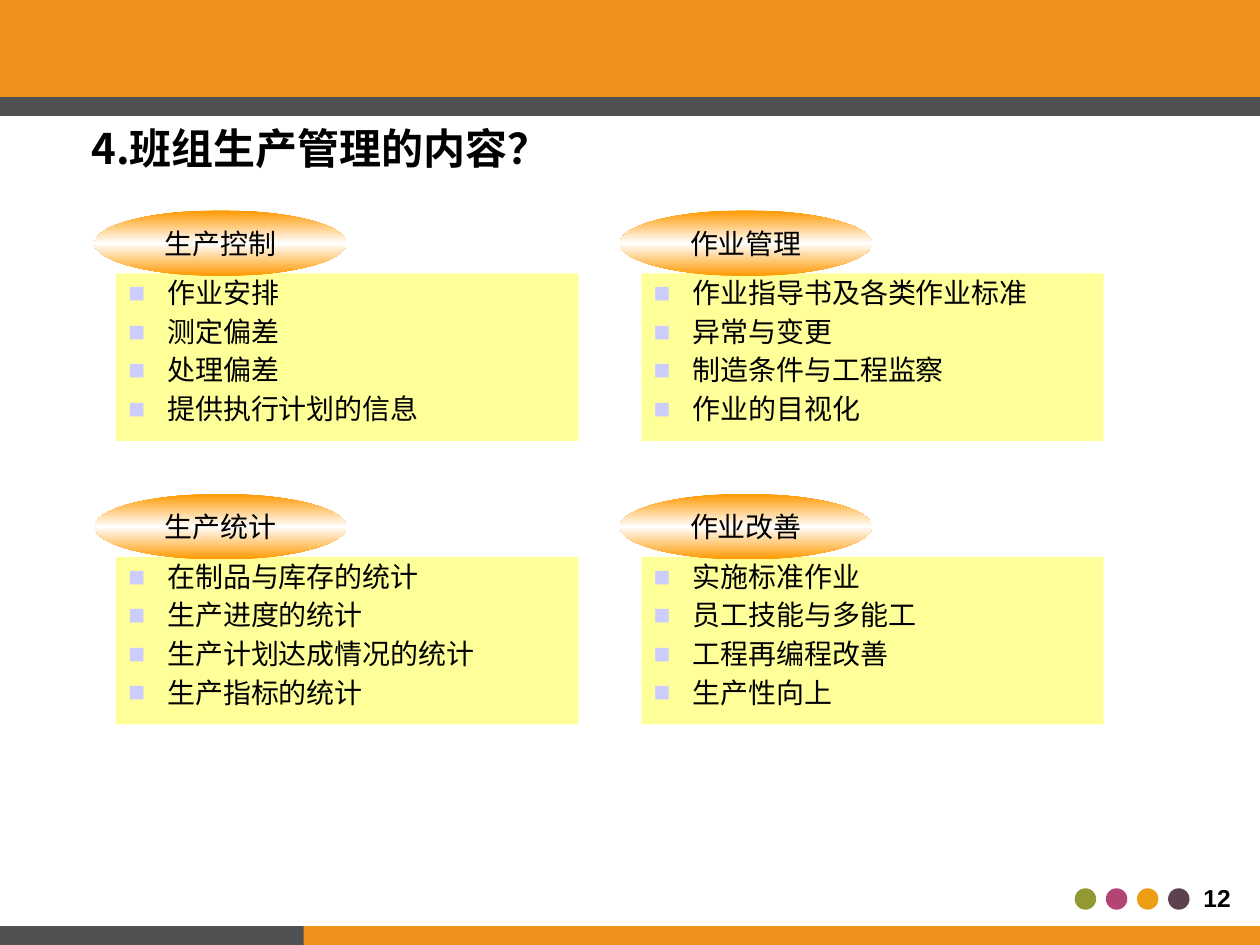
import copy
import dataclasses

import lxml.etree
import pptx
import pptx.dml.color
import pptx.enum.shapes
import pptx.enum.text
import pptx.oxml.ns
import pptx.util

Inches = pptx.util.Inches
Shape = pptx.enum.shapes.MSO_SHAPE
Align = pptx.enum.text.PP_ALIGN
Anchor = pptx.enum.text.MSO_ANCHOR
qn = pptx.oxml.ns.qn


@dataclasses.dataclass(frozen=True)
class Theme:
    """Colours, fonts and type sizes of the deck."""
    orange: str = "F0901D"
    gray: str = "505153"
    panel: str = "FFFF99"
    bullet: str = "CCCCFF"
    ink: str = "000000"
    glow: tuple = ("FF9900", "FFFFFF", "FF9900")
    dots: tuple = ("939932", "B24476", "EC9F14", "5C414F")
    font: str = "Noto Sans CJK SC"
    number_font: str = "Arial"
    title_size: int = 24
    body_size: int = 16
    number_size: int = 14


THEME = Theme()

TOPICS = [
    [("生产控制", ["作业安排", "测定偏差", "处理偏差", "提供执行计划的信息"]),
     ("作业管理", ["作业指导书及各类作业标准", "异常与变更", "制造条件与工程监察", "作业的目视化"])],
    [("生产统计", ["在制品与库存的统计", "生产进度的统计", "生产计划达成情况的统计", "生产指标的统计"]),
     ("作业改善", ["实施标准作业", "员工技能与多能工", "工程再编程改善", "生产性向上"])],
]


def add_element(parent, tag, **attributes):
    """Append a DrawingML child element and return it."""
    return lxml.etree.SubElement(parent, qn(tag), attributes)


def add_block(page, kind, left, top, width, height, color=None):
    """Add a borderless preset shape, filled when a colour is given."""
    block = page.shapes.add_shape(kind, Inches(left), Inches(top), Inches(width), Inches(height))
    block.shadow.inherit = False
    block.line.fill.background()
    if color:
        block.fill.solid()
        block.fill.fore_color.rgb = pptx.dml.color.RGBColor.from_string(color)
    return block


def add_bullet(para):
    """Give a paragraph a hanging square bullet."""
    properties = para._p.get_or_add_pPr()
    indent = Inches(0.31)
    properties.set("marL", str(indent))
    properties.set("indent", str(-indent))
    add_element(add_element(properties, "a:buClr"), "a:srgbClr", val=THEME.bullet)
    add_element(properties, "a:buFont", typeface=THEME.number_font)
    add_element(properties, "a:buChar", char="■")


def set_space_before(para, percent):
    """Set the space before a paragraph as a share of its line."""
    space = lxml.etree.Element(qn("a:spcBef"))
    add_element(space, "a:spcPct", val=str(percent * 1000))
    para._p.pPr.find(qn("a:lnSpc")).addnext(space)


def write_text(box, lines, size=THEME.body_size, font=THEME.font, bold=False,
               align=Align.CENTER, anchor=Anchor.TOP, wrap=True, bullets=False):
    """Write lines as formatted paragraphs in a shape or text box."""
    frame = box.text_frame
    frame.word_wrap = wrap
    frame.vertical_anchor = anchor
    for index, line in enumerate(lines):
        para = frame.paragraphs[0] if index == 0 else frame.add_paragraph()
        if bullets:
            add_bullet(para)
            para.line_spacing = 0.9
            if index:
                set_space_before(para, 30)
        para.alignment = align
        span = para.add_run()
        span.text = line
        span.font.size = pptx.util.Pt(size)
        span.font.bold = bold
        span.font.name = font
        span.font.color.rgb = pptx.dml.color.RGBColor.from_string(THEME.ink)
        add_element(span.font._element, "a:ea", typeface=font)


def add_label(page, text, left, top, width, height, **text_format):
    """Add an unwrapped text box."""
    box = page.shapes.add_textbox(Inches(left), Inches(top), Inches(width), Inches(height))
    write_text(box, [text], wrap=False, **text_format)


def fill_gradient(shape, colors):
    """Fill a shape with an even vertical gradient."""
    shape.fill.gradient()
    shape.fill.gradient_angle = 90
    stops = shape._element.spPr.find(".//" + qn("a:gsLst"))
    for stop in list(stops):
        stops.remove(stop)
    for index, color in enumerate(colors):
        position = str(100000 * index // (len(colors) - 1))
        add_element(add_element(stops, "a:gs", pos=position), "a:srgbClr", val=color)


def add_header(page, left, top, width, height):
    """Draw the orange band with its gray lower edge."""
    edge = 0.15
    add_block(page, Shape.RECTANGLE, left, top, width, height - edge, THEME.orange)
    add_block(page, Shape.RECTANGLE, left, top + height - edge, width, edge, THEME.gray)


def add_footer(page, left, top, width, height):
    """Draw the two-colour bottom strip, the dots and the page number."""
    add_block(page, Shape.RECTANGLE, left + 1.95, top, width - 1.95, height, THEME.orange)
    add_block(page, Shape.RECTANGLE, left, top, 2.41, height, THEME.gray)
    for index, color in enumerate(THEME.dots):
        add_block(page, Shape.OVAL, left + 8.53 + index * 0.247, top - 0.3, 0.17, 0.17, color)
    add_label(page, "12", left + 9.44, top - 0.39, 0.44, 0.34,
              size=THEME.number_size, font=THEME.number_font, bold=True)


def add_topic(page, heading, items, left, top, width, height):
    """Draw a bulleted panel with an oval heading over its top edge."""
    panel = add_block(page, Shape.RECTANGLE, left + 0.17, top + 0.5,
                      width - 0.17, height - 0.5, THEME.panel)
    write_text(panel, items, align=Align.LEFT, bullets=True)
    oval = add_block(page, Shape.OVAL, left, top, 2, 0.52)
    fill_gradient(oval, THEME.glow)
    write_text(oval, [heading], anchor=Anchor.MIDDLE)


def add_topic_grid(page, left, top, column_step, row_step):
    """Place the topics on a regular grid."""
    for row, topics in enumerate(TOPICS):
        for column, (heading, items) in enumerate(topics):
            add_topic(page, heading, items, left + column * column_step,
                      top + row * row_step, 3.84, 1.83)


def main():
    """Build and save the slide."""
    deck = pptx.Presentation()
    deck.slide_width, deck.slide_height = Inches(10), Inches(7.5)
    page = deck.slides.add_slide(deck.slide_layouts[6])
    add_header(page, 0, 0, 10, 0.92)
    add_footer(page, 0, 7.35, 10, 0.15)
    add_topic_grid(page, 0.75, 1.67, 4.17, 2.25)
    add_label(page, "4.班组生产管理的内容？", 0.58, 0.92, 3.93, 0.51,
              size=THEME.title_size, bold=True)
    deck.save("out.pptx")


if __name__ == "__main__":
    main()
